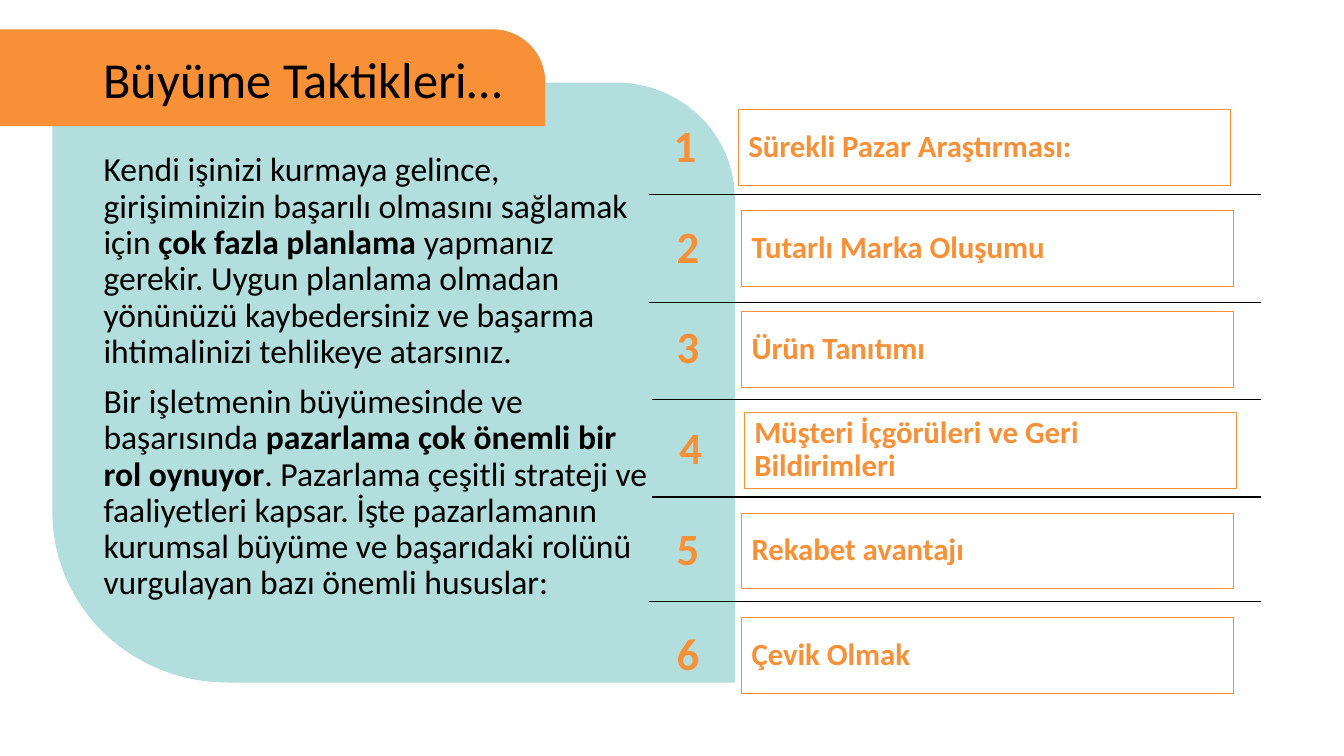
from dataclasses import dataclass
from math import cos, pi, sin

from lxml.etree import SubElement
from pptx import Presentation
from pptx.dml.color import RGBColor
from pptx.enum.shapes import MSO_CONNECTOR, MSO_SHAPE
from pptx.enum.text import MSO_ANCHOR as ANCHOR, PP_ALIGN as ALIGN
from pptx.oxml.ns import qn
from pptx.shapes.autoshape import Shape
from pptx.slide import Slide
from pptx.util import Cm, Pt

ORANGE, TEAL, BLACK = "F79037", "B2DEDD", "000000"
FONT = "Calibri"
Point = tuple[float, float]


@dataclass
class Tactic:
    number: int
    title: str
    left: float
    top: float


@dataclass
class Rule:
    left: float
    top: float


@dataclass
class Style:
    size: float
    color: str
    bold: bool = False
    align: ALIGN = ALIGN.LEFT
    anchor: ANCHOR = ANCHOR.MIDDLE


def rgb(color: str) -> RGBColor:
    return RGBColor.from_string(color)


def quarter(cx: float, cy: float, rx: float, ry: float, start: float) -> list[Point]:
    angles = [start + pi / 2 * i / 24 for i in range(25)]
    return [(cx + rx * cos(a), cy + ry * sin(a)) for a in angles]


def draw_panel(s: Slide, outline: list[Point], color: str) -> None:
    points = [(Cm(x), Cm(y)) for x, y in outline]
    builder = s.shapes.build_freeform(*points[0])
    builder.add_line_segments(points[1:], close=True)
    sp = builder.convert_to_shape()
    sp.shadow.inherit = False
    sp.fill.solid()
    sp.fill.fore_color.rgb = rgb(color)
    sp.line.fill.background()


def draw_rule(s: Slide, rule: Rule) -> None:
    y = Cm(rule.top)
    line = s.shapes.add_connector(MSO_CONNECTOR.STRAIGHT, Cm(31.78), y, Cm(rule.left), y)
    line.line.color.rgb = rgb(BLACK)
    line.line.width = Pt(1)
    SubElement(line._element.spPr, qn("a:effectLst"))


def write(sp: Shape, paragraphs: list[list[str]], style: Style) -> None:
    tf = sp.text_frame
    tf.word_wrap = True
    tf.vertical_anchor = style.anchor
    for i, parts in enumerate(paragraphs):
        p = tf.add_paragraph() if i else tf.paragraphs[0]
        p.alignment = style.align
        p.line_spacing = 0.9
        p.space_before = Pt(10 if i else 0)
        for j, part in enumerate(parts):
            r = p.add_run()
            r.text = part
            r.font.name = FONT
            r.font.size = Pt(style.size)
            r.font.bold = style.bold or j % 2 == 1
            r.font.color.rgb = rgb(style.color)


def add_text(s: Slide, box: tuple[float, float, float, float],
             paragraphs: list[list[str]], style: Style) -> None:
    write(s.shapes.add_textbox(*map(Cm, box)), paragraphs, style)


def draw_tactic(s: Slide, tactic: Tactic) -> None:
    add_text(s, (tactic.left, tactic.top, 1.96, 1.91), [[str(tactic.number)]],
             Style(32, ORANGE, True, ALIGN.CENTER))
    sp = s.shapes.add_shape(MSO_SHAPE.RECTANGLE, Cm(tactic.left + 2.33),
                            Cm(tactic.top), Cm(12.4), Cm(1.91))
    sp.shadow.inherit = False
    sp.fill.background()
    sp.line.color.rgb = rgb(ORANGE)
    sp.line.width = Pt(0.75)
    write(sp, [[tactic.title]], Style(22, ORANGE, True))


TITLES = ["Sürekli Pazar Araştırması:", "Tutarlı Marka Oluşumu", "Ürün Tanıtımı",
          "Müşteri İçgörüleri ve Geri Bildirimleri", "Rekabet avantajı", "Çevik Olmak"]
LEFTS = [16.28, 16.36, 16.36, 16.43, 16.36, 16.36]
TOPS = [2.77 + 2.54 * i for i in range(5)] + [15.57]
TACTICS = [Tactic(n, *row) for n, row in enumerate(zip(TITLES, LEFTS, TOPS), 1)]
RULES = [Rule(16.36, 4.9), Rule(16.36, 7.62), Rule(16.43, 10.06),
         Rule(16.43, 12.52), Rule(16.36, 15.16)]
INTRO = [
    ["Kendi işinizi kurmaya gelince, girişiminizin başarılı olmasını sağlamak için ",
     "çok fazla planlama ",
     "yapmanız gerekir. Uygun planlama olmadan yönünüzü kaybedersiniz "
     "ve başarma ihtimalinizi tehlikeye atarsınız."],
    ["Bir işletmenin büyümesinde ve başarısında ",
     "pazarlama çok önemli bir rol oynuyor",
     ". Pazarlama çeşitli strateji ve faaliyetleri kapsar. İşte pazarlamanın kurumsal "
     "büyüme ve başarıdaki rolünü vurgulayan bazı önemli hususlar:"],
]
TEAL_OUTLINE = [(18.52, 17.2), *quarter(5.72, 12.9, 4.4, 4.3, pi / 2), (1.32, 2.08),
                *quarter(15.52, 5, 3, 2.92, -pi / 2)]
ORANGE_OUTLINE = [(0, 3.18), (0, 0.74), *quarter(12.42, 2.06, 1.32, 1.32, -pi / 2),
                  (13.74, 3.18)]


def main() -> None:
    prs = Presentation()
    prs.slide_width, prs.slide_height = Cm(33.87), Cm(19.05)
    s = prs.slides.add_slide(prs.slide_layouts[6])
    draw_panel(s, TEAL_OUTLINE, TEAL)
    draw_panel(s, ORANGE_OUTLINE, ORANGE)
    for rule in RULES:
        draw_rule(s, rule)
    add_text(s, (2.36, 1.07, 14, 2.01), [["Büyüme Taktikleri…"]], Style(36, BLACK))
    add_text(s, (2.36, 3.73, 14.35, 12.98), INTRO, Style(24, BLACK, anchor=ANCHOR.TOP))
    for tactic in TACTICS:
        draw_tactic(s, tactic)
    prs.save("out.pptx")


if __name__ == "__main__":
    main()
